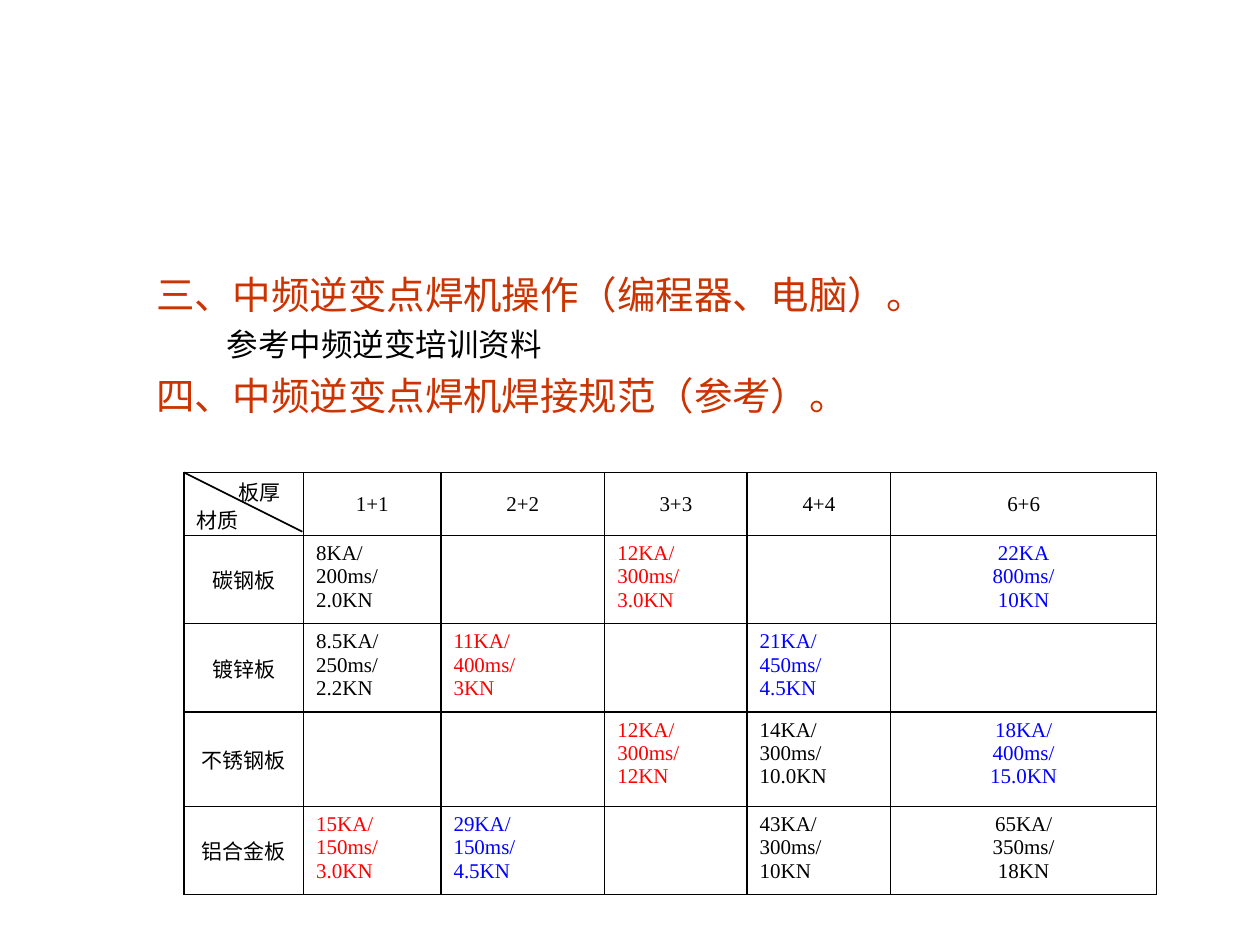
from dataclasses import dataclass

import lxml.etree
import pptx
import pptx.enum.shapes
import pptx.enum.text
import pptx.oxml
import pptx.oxml.ns
import pptx.util

Inches, Pt = pptx.util.Inches, pptx.util.Pt
qn = pptx.oxml.ns.qn
PP_ALIGN = pptx.enum.text.PP_ALIGN
MSO_ANCHOR = pptx.enum.text.MSO_ANCHOR

COLORS = {"black": "000000", "heading": "CC3300", "red": "FF0000", "blue": "0000FF"}
CJK_FONT, LATIN_FONT = "Noto Sans CJK SC", "Times New Roman"


@dataclass
class Line:
    text: str
    size: int
    color: str
    first_indent: float


@dataclass
class Setting:
    """Welding current, time and force for one material and thickness."""
    text: str
    color: str = "black"


def add_text(p, text: str, *, size: float = 12, color: str = "black",
             font: str = LATIN_FONT, align=PP_ALIGN.LEFT) -> None:
    p.alignment = align
    r = p.add_run()
    r.text = text
    r.font.size = Pt(size)
    r.font.name = font
    r.font.color.rgb = pptx.dml.color.RGBColor.from_string(COLORS[color])
    ea = lxml.etree.SubElement(r.font._element, qn("a:ea"))
    ea.set("typeface", CJK_FONT)


def add_cell_lines(cell, lines: list[str], *, color: str = "black",
                   centered: bool = False, middle: bool = False) -> None:
    tf = cell.text_frame
    cell.vertical_anchor = MSO_ANCHOR.MIDDLE if middle else MSO_ANCHOR.TOP
    for i, text in enumerate(lines):
        p = tf.add_paragraph() if i else tf.paragraphs[0]
        add_text(p, text, color=color,
                 align=PP_ALIGN.CENTER if centered else PP_ALIGN.LEFT)


def set_borders(cell) -> None:
    cell.fill.background()
    tc_pr = cell._tc.get_or_add_tcPr()
    for i, side in enumerate(("lnL", "lnR", "lnT", "lnB")):
        ln = pptx.oxml.parse_xml(
            f'<a:{side} xmlns:a="http://schemas.openxmlformats.org/drawingml/2006/main" '
            f'w="{Pt(1)}"><a:solidFill><a:srgbClr val="{COLORS["black"]}"/>'
            f'</a:solidFill></a:{side}>')
        tc_pr.insert(i, ln)


HANG = 0.56
LINES = [
    Line("三、中频逆变点焊机操作（编程器、电脑）。", 22, "heading", -HANG),
    Line("参考中频逆变培训资料", 18, "black", 0),
    Line("四、中频逆变点焊机焊接规范（参考）。", 22, "heading", -HANG),
]

THICKNESSES = ["1+1", "2+2", "3+3", "4+4", "6+6"]
SETTINGS = {
    "碳钢板": [Setting("8KA/ 200ms/ 2.0KN"), None,
            Setting("12KA/ 300ms/ 3.0KN", "red"), None,
            Setting("22KA 800ms/ 10KN", "blue")],
    "镀锌板": [Setting("8.5KA/ 250ms/ 2.2KN"),
            Setting("11KA/ 400ms/ 3KN", "red"), None,
            Setting("21KA/ 450ms/ 4.5KN", "blue"), None],
    "不锈钢板": [None, None, Setting("12KA/ 300ms/ 12KN", "red"),
             Setting("14KA/ 300ms/ 10.0KN"),
             Setting("18KA/ 400ms/ 15.0KN", "blue")],
    "铝合金板": [Setting("15KA/ 150ms/ 3.0KN", "red"),
             Setting("29KA/ 150ms/ 4.5KN", "blue"), None,
             Setting("43KA/ 300ms/ 10KN"), Setting("65KA/ 350ms/ 18KN")],
}
COL_WIDTHS = [0.95, 1.09, 1.3, 1.13, 1.14, 2.11]
ROW_HEIGHTS = [0.5, 0.7, 0.7, 0.75, 0.7]
TABLE_LEFT, TABLE_TOP = 1.46, 3.75


def add_headings(s) -> None:
    sp = s.shapes.add_textbox(Inches(1.14), Inches(2.1), Inches(7.88), Inches(1.47))
    tf = sp.text_frame
    tf.word_wrap = True
    for i, line in enumerate(LINES):
        p = tf.add_paragraph() if i else tf.paragraphs[0]
        p_pr = p._p.get_or_add_pPr()
        p_pr.set("marL", str(Inches(HANG)))
        p_pr.set("indent", str(Inches(line.first_indent)))
        if i:
            p.space_before = Pt(line.size / 4)
        add_text(p, line.text, size=line.size, color=line.color, font=CJK_FONT)


def add_settings_table(s) -> None:
    table = s.shapes.add_table(
        len(ROW_HEIGHTS), len(COL_WIDTHS), Inches(TABLE_LEFT), Inches(TABLE_TOP),
        Inches(sum(COL_WIDTHS)), Inches(sum(ROW_HEIGHTS))).table
    table.first_row = table.horz_banding = False
    for col, width in zip(table.columns, COL_WIDTHS):
        col.width = Inches(width)
    for row, height in zip(table.rows, ROW_HEIGHTS):
        row.height = Inches(height)
    for cell in table.iter_cells():
        set_borders(cell)

    # Corner cell: thickness above the diagonal, material below
    corner = table.cell(0, 0)
    corner.margin_bottom = 0
    add_cell_lines(corner, ["板厚", "材质"])
    for p in corner.text_frame.paragraphs:
        p.line_spacing = Pt(16)
    corner.text_frame.paragraphs[0]._p.get_or_add_pPr().set("marL", str(Inches(0.33)))

    # Header row
    for c, thickness in enumerate(THICKNESSES, start=1):
        add_cell_lines(table.cell(0, c), [thickness], centered=True, middle=True)

    # Material rows; the wide last column is centred
    for r, (material, settings) in enumerate(SETTINGS.items(), start=1):
        add_cell_lines(table.cell(r, 0), [material], centered=True, middle=True)
        for c, setting in enumerate(settings, start=1):
            if setting:
                add_cell_lines(table.cell(r, c), setting.text.split(),
                               color=setting.color, centered=c == len(settings))


def add_diagonal(s) -> None:
    line = s.shapes.add_connector(
        pptx.enum.shapes.MSO_CONNECTOR.STRAIGHT, Inches(TABLE_LEFT), Inches(TABLE_TOP),
        Inches(2.4), Inches(4.22))
    line.line.color.rgb = pptx.dml.color.RGBColor.from_string(COLORS["black"])
    line.line.width = Pt(1)
    lxml.etree.SubElement(line._element.spPr, qn("a:effectLst"))


def main() -> None:
    prs = pptx.Presentation()
    prs.slide_width, prs.slide_height = Inches(10), Inches(7.5)
    s = prs.slides.add_slide(prs.slide_layouts[6])
    add_headings(s)
    add_settings_table(s)
    add_diagonal(s)
    prs.save("out.pptx")


if __name__ == "__main__":
    main()
